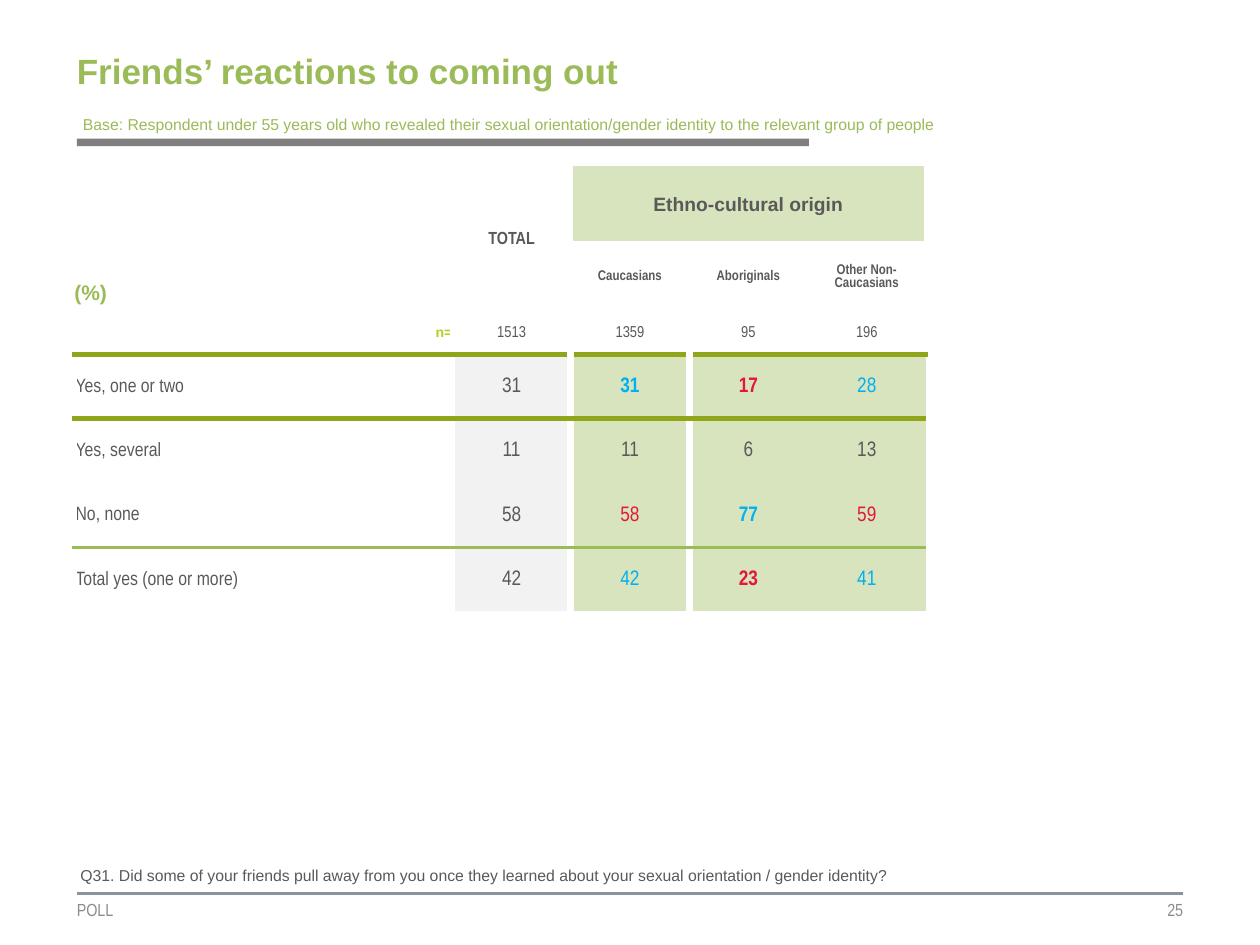
from lxml import etree
from pptx import Presentation
from pptx import util as u
from pptx.dml.color import RGBColor
from pptx.enum import shapes, text
from pptx.oxml import ns

GREEN, GREY, PALE, OLIVE = "9BBB59", "595959", "D7E4BD", "91A51B"
BLUE, RED, WHITE = "00B0F0", "E31836", "FFFFFF"
LEFT, MID, RIGHT = text.PP_ALIGN.LEFT, text.PP_ALIGN.CENTER, text.PP_ALIGN.RIGHT
NARROW = "Arial Narrow"
NO_GRID = "{2D5ABB26-0587-4C30-8999-92F81FD0307C}"


def rgb(code):
    return RGBColor.from_string(code)


class Page:
    def __init__(self, deck):
        self.slide = deck.slides.add_slide(deck.slide_layouts[6])
        self.items = self.slide.shapes

    def add_run(self, frame, words, size, color=GREY, bold=False, font="Arial", align=LEFT):
        para = frame.paragraphs[0]
        para.alignment = align
        run = para.add_run()
        run.text = words
        run.font.size = u.Pt(size)
        run.font.name = font
        run.font.bold = bold
        run.font.color.rgb = rgb(color)
        return para

    def label(self, box, words, size, color, inset=(0.1, 0.05), wrap=True,
              anchor=text.MSO_ANCHOR.TOP, **style):
        frame = self.items.add_textbox(*map(u.Inches, box)).text_frame
        frame.word_wrap = wrap
        frame.vertical_anchor = anchor
        frame.margin_left = frame.margin_right = u.Inches(inset[0])
        frame.margin_top = frame.margin_bottom = u.Inches(inset[1])
        self.add_run(frame, words, size, color, **style)

    def bar(self, box, color):
        shape = self.items.add_shape(shapes.MSO_SHAPE.RECTANGLE, *map(u.Inches, box))
        shape.shadow.inherit = False
        shape.fill.solid()
        shape.fill.fore_color.rgb = rgb(color)
        shape.line.fill.background()

    def rule(self, ends, color, width):
        line = self.items.add_connector(shapes.MSO_CONNECTOR.STRAIGHT, *map(u.Inches, ends))
        line.line.color.rgb = rgb(color)
        line.line.width = u.Pt(width)
        etree.SubElement(line.element.spPr, ns.qn("a:effectLst"))

    def grid(self, left, top, cols, rows):
        frame = self.items.add_table(len(rows), len(cols), u.Inches(left), u.Inches(top),
                                     u.Inches(sum(cols)), u.Inches(sum(rows)))
        table = frame.table
        table.first_row = table.horz_banding = False
        table._tbl.tblPr.find(ns.qn("a:tableStyleId")).text = NO_GRID
        for col, width in zip(table.columns, cols):
            col.width = u.Inches(width)
        for row, height in zip(table.rows, rows):
            row.height = u.Inches(height)
        return table

    def cell(self, cell, words, size, fill=None, edges=None, inset=(0.01, 0.01, 0.01, 0),
             anchor=text.MSO_ANCHOR.MIDDLE, space=None, align=MID, **style):
        """Fill one table cell; edges maps L, R, T or B to (colour, points)."""
        (cell.margin_left, cell.margin_top,
         cell.margin_right, cell.margin_bottom) = map(u.Inches, inset)
        cell.vertical_anchor = anchor
        para = self.add_run(cell.text_frame, words, size, align=align, **style)
        if space:
            para.line_spacing = space
        props = cell._tc.get_or_add_tcPr()
        for side in "LRTB":
            if side in (edges or {}):
                color, width = edges[side]
                line = etree.SubElement(props, ns.qn("a:ln" + side), w=str(u.Pt(width)))
                paint = etree.SubElement(line, ns.qn("a:solidFill"))
                etree.SubElement(paint, ns.qn("a:srgbClr"), val=color)
        if fill:
            cell.fill.solid()
            cell.fill.fore_color.rgb = rgb(fill)


HEADS = ["Caucasians", "Aboriginals", "Other Non-Caucasians"]
BASES = ["1513", "1359", "95", "196"]
ANSWERS = [  # label, then value, colour and weight for each column
    ("Yes, one or two", ("31", GREY, False), ("31", BLUE, True),
     ("17", RED, True), ("28", BLUE, False)),
    ("Yes, several", ("11", GREY, False), ("11", GREY, False),
     ("6", GREY, False), ("13", GREY, False)),
    ("No, none", ("58", GREY, False), ("58", RED, False),
     ("77", BLUE, True), ("59", RED, False)),
    ("Total yes (one or more)", ("42", GREY, False), ("42", BLUE, False),
     ("23", RED, True), ("41", BLUE, False)),
]


def fill_heads(page, table):
    for first, last in (((0, 1), (2, 1)), ((0, 2), (1, 4)), ((1, 0), (2, 0))):
        table.cell(*first).merge(table.cell(*last))
    thin = (WHITE, 3)
    side = (0, 0.05, 0, 0.05)
    page.cell(table.cell(0, 1), "TOTAL", 10, bold=True, font=NARROW)
    page.cell(table.cell(0, 2), "Ethno-cultural origin", 11, fill=PALE, bold=True,
              edges={"L": thin, "R": thin})
    page.cell(table.cell(1, 0), "(%)", 12, color=GREEN, bold=True, align=LEFT, inset=side,
              anchor=text.MSO_ANCHOR.BOTTOM, space=0.95)
    for c, head in enumerate(HEADS, 2):
        page.cell(table.cell(2, c), head, 8, bold=True, font=NARROW)
    edges = {"L": thin, "R": thin, "B": (OLIVE, 3)}
    page.cell(table.cell(3, 0), "n=", 8, color="B5CC22", bold=True, align=RIGHT,
              inset=side, space=0.95, edges=edges)
    for c, base in enumerate(BASES, 1):
        page.cell(table.cell(3, c), base, 9, font=NARROW, edges=edges)


def fill_answers(page, table):
    thin, thick, total = (WHITE, 3), (WHITE, 4.5), (GREEN, 2.25)
    sides = [{"L": thin, "R": thin}, {"L": thin, "R": thick}, {"L": thick}, {}, {}]
    level = [{"T": (OLIVE, 3)}, {}, {"B": total}, {"T": total}]
    for r, (name, *values) in enumerate(ANSWERS):
        page.cell(table.cell(r + 4, 0), name, 11, font=NARROW, align=LEFT,
                  edges={**sides[0], **level[r]})
        for c, (value, color, bold) in enumerate(values, 1):
            page.cell(table.cell(r + 4, c), value, 12, color=color, bold=bold, font=NARROW,
                      fill="F2F2F2" if c == 1 else PALE, edges={**sides[c], **level[r]})


def main():
    deck = Presentation()
    deck.slide_width, deck.slide_height = u.Inches(10), u.Inches(7.5)
    page = Page(deck)
    page.rule((0.61, 7.09, 9.39, 7.09), "88959E", 1.5)
    page.bar((0.61, 1.1, 5.81, 0.06), "7F7F7F")
    foot = dict(size=10, color="8C8C8C", font=NARROW, inset=(0, 0),
                anchor=text.MSO_ANCHOR.MIDDLE)
    page.label((0.61, 7.09, 2.8, 0.26), "POLL", **foot)
    page.label((6.55, 7.09, 2.84, 0.26), "25", align=RIGHT, **foot)
    table = page.grid(0.59, 1.32, [3] + [0.94] * 4, [0.4, 0.18, 0.56, 0.34] + [0.51] * 4)
    fill_heads(page, table)
    fill_answers(page, table)
    page.label((0.61, 0.36, 6.2, 0.69), "Friends’ reactions to coming out", 20, GREEN,
               inset=(0, 0.03), bold=True)
    page.label((0.56, 0.86, 7.02, 0.25),
               "Base: Respondent under 55 years old who revealed their sexual "
               "orientation/gender identity to the relevant group of people",
               9, GREEN, wrap=False)
    page.label((0.54, 6.82, 9.02, 0.25),
               "Q31. Did some of your friends pull away from you once they learned about "
               "your sexual orientation / gender identity?", 9, GREY)
    deck.save("out.pptx")


if __name__ == "__main__":
    main()
